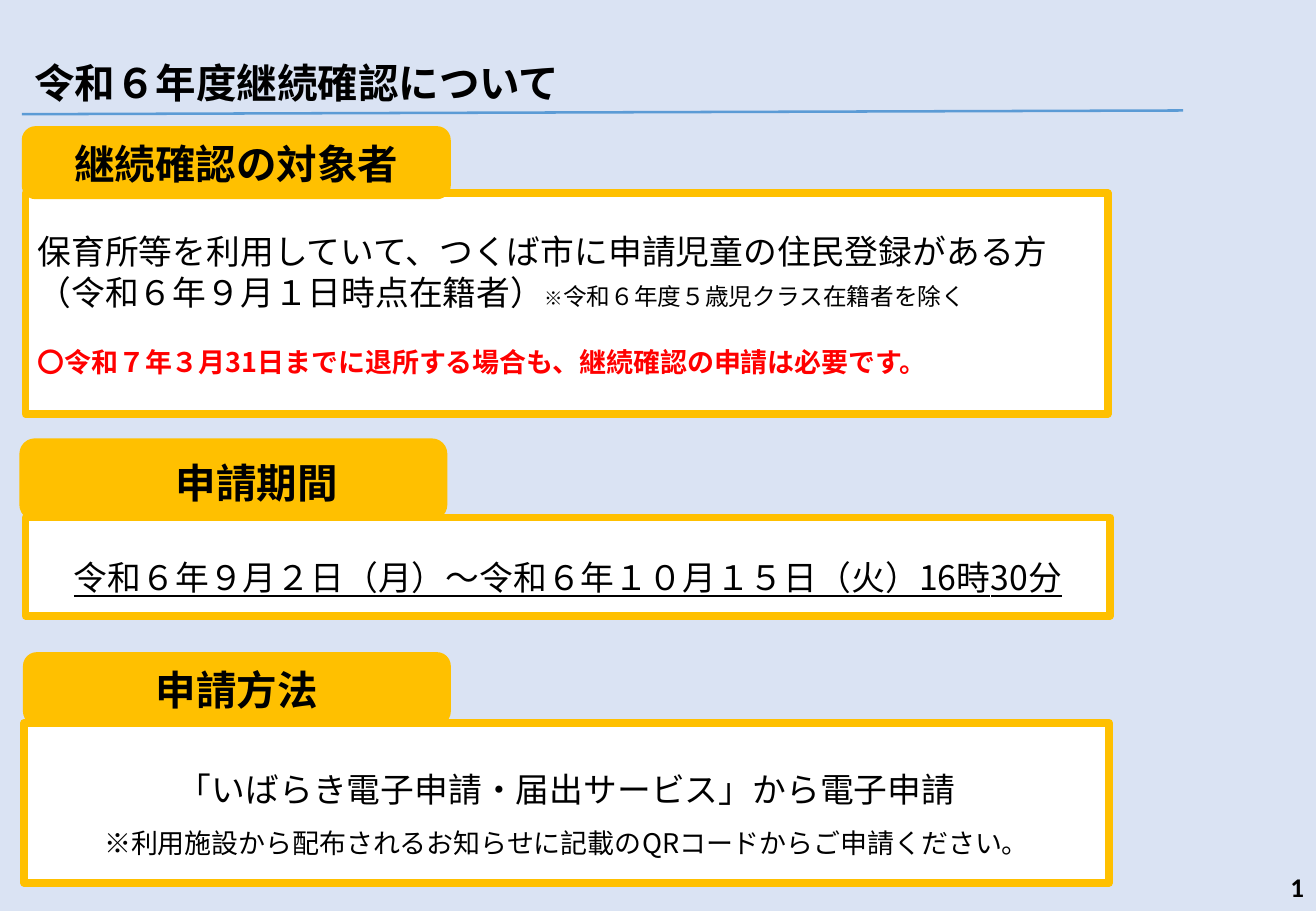
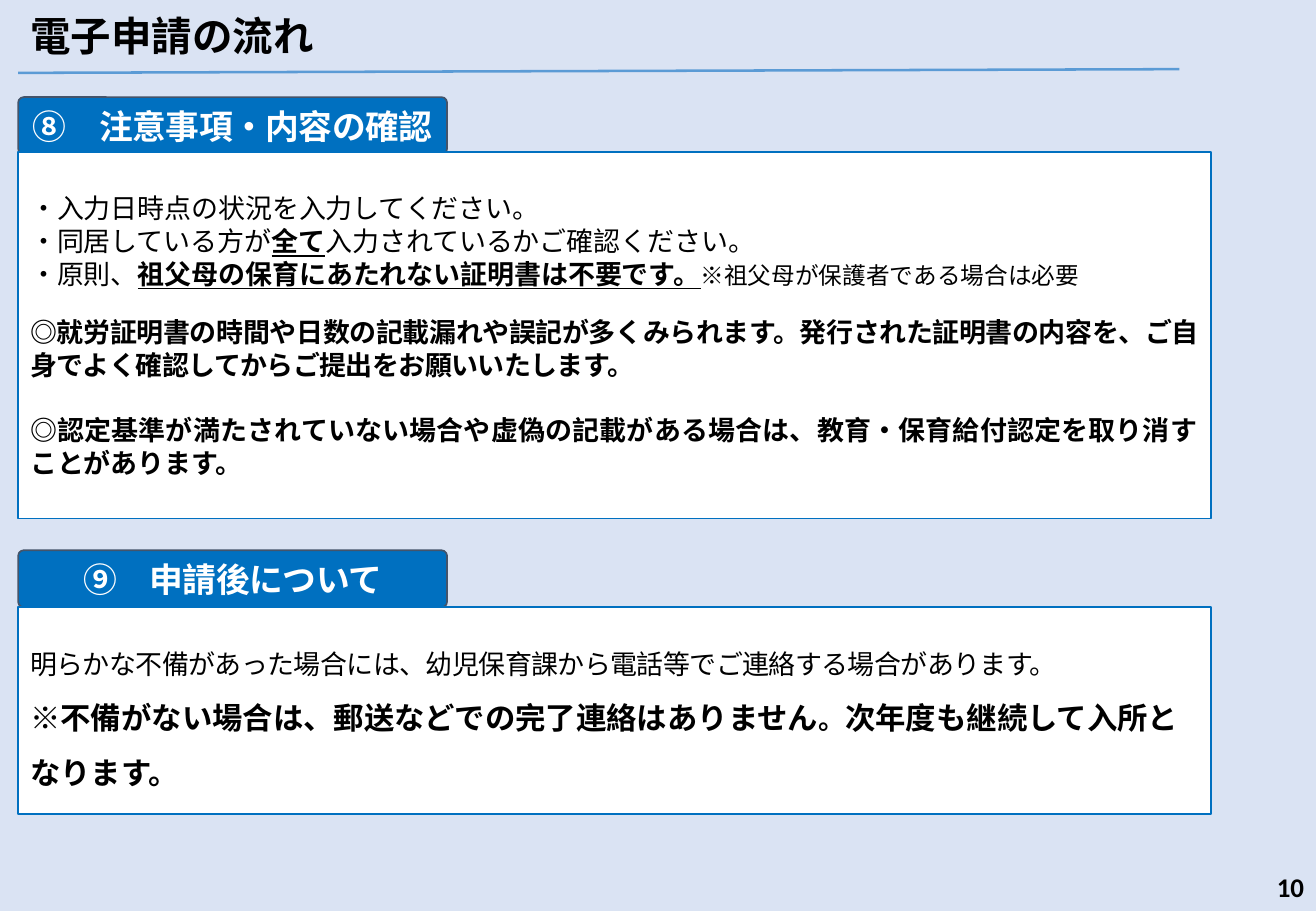
from dataclasses import dataclass

from pptx import Presentation
from pptx import util as u
from pptx.dml.color import RGBColor
from pptx.enum import shapes, text
from pptx.oxml.ns import qn
from pptx.oxml.xmlchemy import OxmlElement

Pt = u.Pt
ALIGN = text.PP_ALIGN
ANCHOR = text.MSO_ANCHOR


@dataclass(frozen=True)
class Theme:
    font: str = "Noto Sans CJK JP"
    number_font: str = "Calibri"
    background: str = "DAE3F3"
    ink: str = "000000"
    white: str = "FFFFFF"
    alert: str = "FF0000"
    rule: str = "5B9BD5"
    title: int = 24
    lead: int = 20
    strong: int = 18
    body: int = 16
    note: int = 14
    mark: int = 11
    spacer: int = 28
    leading: float = 1.22


@dataclass(frozen=True)
class Panel:
    """Look of a heading tab with its framed box."""
    fill: str
    tab_line: str
    tab_width: float
    box_width: float
    ink: str
    anchor: object
    radius: float
    tab_on_top: bool


T = Theme()
AMBER = Panel("FFC000", "FFC000", 3, 4.5, T.ink, ANCHOR.TOP, 0.167, True)
BLUE = Panel("0070C0", "44546A", 1, 1, T.white, ANCHOR.MIDDLE, 0.097, False)

# Content. Run: (text, size, flags) with b bold, u underline, r red, t tight.
# Paragraph: (alignment, line spacing, space before, runs)
SLIDES = [
    dict(
        title="令和６年度継続確認について", number="1", panel=AMBER,
        title_at=(13, 36), rule_y=(67.7, 65.5),
        sections=[
            dict(tab=(14.4, 76.3, 251.3, 40.3), box=(15.1, 114.5, 641.5, 131),
                 head=[("継続確認の対象者", T.title, "b")],
                 body=[
                     (ALIGN.LEFT, 1, 0, [("保育所等を利用していて、つくば市に申請児童の住民登録がある方", T.lead, "")]),
                     (ALIGN.LEFT, 1, 0, [("（令和６年９月１日時点在籍者）", T.lead, ""),
                                         ("※", T.mark, ""),
                                         ("令和６年度５歳児クラス在籍者を除く", T.note, "")]),
                     (ALIGN.LEFT, 1, 19.5, [("〇令和７年３月31日までに退所する場合も、継続確認の申請は必要です。", T.body, "br")]),
                 ]),
            dict(tab=(13, 261.4, 250.6, 45.4), box=(15.1, 306.7, 643, 58.3),
                 head=[("　", T.spacer, "b"), ("申請期間", T.title, "b")],
                 body=[
                     (ALIGN.CENTER, 1.5, 0, [("令和６年９月２日（月）～令和６年１０月１５日（火）16時30分", T.lead, "u")]),
                 ]),
            dict(tab=(15.1, 388.1, 250.6, 40.3), box=(14.4, 428.4, 643, 95),
                 head=[("申請方法", T.title, "b")],
                 body=[
                     (ALIGN.CENTER, 1.5, 0, [("「いばらき電子申請・届出サービス」から電子申請", T.lead, "")]),
                     (ALIGN.CENTER, 1.5, 0, [("※利用施設から配布されるお知らせに記載のQRコードからご申請ください。", T.body, "")]),
                 ]),
        ]),
    dict(
        title="電子申請の流れ", number="10", panel=BLUE,
        title_at=(10.8, 7.9), rule_y=(43.2, 41),
        sections=[
            dict(tab=(10.8, 57.6, 254.2, 33.8), box=(10.8, 90, 707, 217.4),
                 head=[("⑧　注意事項・内容の確認", T.lead, "bt")],
                 body=[
                     (ALIGN.JUSTIFY, 1, 0, [("・入力日時点の状況を入力してください。", T.body, "")]),
                     (ALIGN.JUSTIFY, 1, 0, [("・同居している方が", T.body, ""),
                                            ("全て", T.body, "bu"),
                                            ("入力されているかご確認ください。", T.body, "")]),
                     (ALIGN.JUSTIFY, 1, 0, [("・原則、", T.body, ""),
                                            ("祖父母の保育にあたれない証明書は不要です。", T.body, "bu"),
                                            ("※祖父母が保護者である場合は必要", T.note, "")]),
                     (ALIGN.JUSTIFY, 1, 15, [("◎就労証明書の時間や日数の記載漏れや誤記が多くみられます。発行された証明書の内容を、ご自身でよく確認してからご提出をお願いいたします。", T.body, "bt")]),
                     (ALIGN.JUSTIFY, 1, 19, [("◎認定基準が満たされていない場合や虚偽の記載がある場合は、教育・保育給付認定を取り消すことがあります。", T.body, "b")]),
                 ]),
            dict(tab=(10.8, 326.2, 254.2, 33.8), box=(10.8, 360, 707, 122.4),
                 head=[("⑨　申請後について", T.lead, "bt")],
                 body=[
                     (ALIGN.LEFT, 1.5, 0, [("明らかな不備があった場合には、幼児保育課から電話等でご連絡する場合があります。", T.body, "t")]),
                     (ALIGN.LEFT, 1.5, 0, [("※不備がない場合は、郵送などでの完了連絡はありません", T.strong, "b"),
                                           ("。", T.body, "b"),
                                           ("次年度も継続して入所となります。", T.strong, "b")]),
                 ]),
        ]),
]


def rgb(value):
    return RGBColor.from_string(value)


def place(sp, left, top, width, height):
    sp.left, sp.top, sp.width, sp.height = map(Pt, (left, top, width, height))


def style_run(r, size, flags="", color=T.ink, font=T.font):
    f = r.font
    f.name, f.size = font, Pt(size)
    f.bold, f.underline = "b" in flags, "u" in flags
    f.color.rgb = rgb(T.alert if "r" in flags else color)
    rPr = r._r.get_or_add_rPr()
    if "t" in flags:
        rPr.set("spc", "-30")
    ea = OxmlElement("a:ea")
    ea.set("typeface", font)
    rPr.find(qn("a:latin")).addnext(ea)


def write(sp, paragraphs, anchor, color=T.ink):
    tf = sp.text_frame
    tf.word_wrap, tf.vertical_anchor = True, anchor
    for i, (align, spacing, before, runs) in enumerate(paragraphs):
        p = tf.add_paragraph() if i else tf.paragraphs[0]
        p.alignment, p.space_before = align, Pt(before)
        largest = max(size for _, size, _ in runs)
        p.line_spacing = Pt(round(largest * T.leading * spacing, 1))
        for words, size, flags in runs:
            r = p.add_run()
            r.text = words
            style_run(r, size, flags, color)


def add_block(s, kind, at, fill, line, width):
    sp = s.shapes.add_shape(kind, *map(Pt, at))
    sp.shadow.inherit = False
    sp.fill.solid()
    sp.fill.fore_color.rgb = rgb(fill)
    sp.line.color.rgb = rgb(line)
    sp.line.width = Pt(width)
    return sp


def add_tab(s, section, look):
    sp = add_block(s, shapes.MSO_SHAPE.ROUNDED_RECTANGLE, section["tab"],
                   look.fill, look.tab_line, look.tab_width)
    sp.adjustments[0] = look.radius
    write(sp, [(ALIGN.CENTER, 1, 0, section["head"])], look.anchor, look.ink)


def add_box(s, section, look):
    sp = add_block(s, shapes.MSO_SHAPE.RECTANGLE, section["box"],
                   T.white, look.fill, look.box_width)
    write(sp, section["body"], ANCHOR.MIDDLE)


def add_title(s, data):
    left, top = data["title_at"]
    width = 688.3
    sp = s.shapes.title
    place(sp, left, top, width, 47.5)
    tf = sp.text_frame
    tf.text = data["title"]
    tf.auto_size = text.MSO_AUTO_SIZE.NONE
    tf.vertical_anchor = ANCHOR.MIDDLE
    p = tf.paragraphs[0]
    p.alignment, p.line_spacing = ALIGN.LEFT, Pt(6.9)
    style_run(p.runs[0], T.title, "b")
    # Rule under the title
    start, end = data["rule_y"]
    rule = s.shapes.add_connector(shapes.MSO_CONNECTOR.STRAIGHT, Pt(left), Pt(start),
                                  Pt(left + width), Pt(end))
    rule.line.color.rgb = rgb(T.rule)
    rule.line.width = Pt(1.5)
    rule._element.spPr.append(OxmlElement("a:effectLst"))


def add_number(s, number):
    sp = s.shapes.add_textbox(Pt(604.8), Pt(511.2), Pt(175.2), Pt(28.8))
    tf = sp.text_frame
    tf.text = number
    tf.word_wrap, tf.vertical_anchor = True, ANCHOR.MIDDLE
    p = tf.paragraphs[0]
    p.alignment = ALIGN.RIGHT
    style_run(p.runs[0], T.body, "b", font=T.number_font)


def main():
    prs = Presentation()
    prs.slide_width, prs.slide_height = Pt(780), Pt(540)
    fill = prs.slide_master.background.fill
    fill.solid()
    fill.fore_color.rgb = rgb(T.background)
    for data in SLIDES:
        s = prs.slides.add_slide(prs.slide_layouts[5])
        look = data["panel"]
        add_title(s, data)
        parts = (add_box, add_tab) if look.tab_on_top else (add_tab, add_box)
        for section in data["sections"]:
            for add_part in parts:
                add_part(s, section, look)
        add_number(s, data["number"])
    prs.save("out.pptx")


if __name__ == "__main__":
    main()
